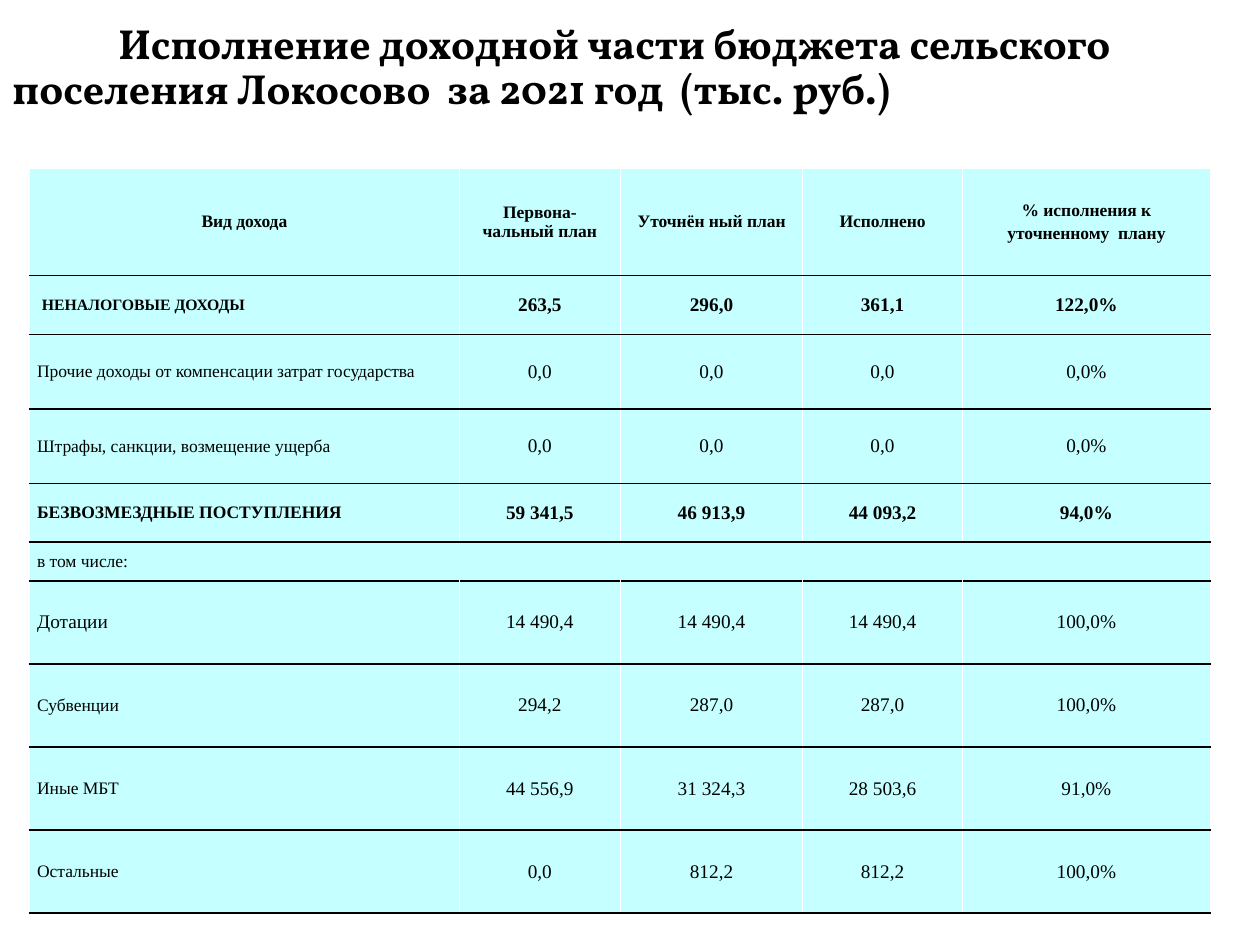
import pptx
import pptx.dml.color
import pptx.enum.text
import pptx.oxml
import pptx.oxml.ns
import pptx.util
from pptx.util import Pt

ALIGN = pptx.enum.text.PP_ALIGN
MIDDLE = pptx.enum.text.MSO_ANCHOR.MIDDLE
BLACK, WHITE, AQUA = "000000", "FFFFFF", "C5FFFF"
WIDE, TIGHT = (7.2, 3.6), (4.5, 0)


def color(value):
    return pptx.dml.color.RGBColor.from_string(value)


class SlideWriter:
    title_font = "Vollkorn"
    table_font = "Times New Roman"

    def __init__(self, page):
        self.page = page

    def span(self, para, text, font, size, bold):
        span = para.add_run()
        span.text = text
        span.font.name = font
        span.font.size = Pt(size)
        span.font.bold = bold
        span.font.color.rgb = color(BLACK)

    def title(self, text, left, top, width, height, indent):
        box = self.page.shapes.add_textbox(Pt(left), Pt(top), Pt(width), Pt(height))
        frame = box.text_frame
        frame.word_wrap = True
        frame.vertical_anchor = MIDDLE
        frame.margin_bottom = Pt(10.5)
        para = frame.paragraphs[0]
        para.line_spacing = 0.9
        para.alignment = ALIGN.LEFT
        properties = para._p.get_or_add_pPr()
        properties.set("marL", "0")
        properties.set("indent", str(Pt(indent)))
        self.span(para, text, self.title_font, 24, True)

    def table(self, left, top, widths, heights):
        frame = self.page.shapes.add_table(
            len(heights), len(widths), Pt(left), Pt(top), Pt(sum(widths)), Pt(sum(heights)))
        grid = frame.table
        grid.first_row = grid.horz_banding = False
        for column, width in zip(grid.columns, widths):
            column.width = Pt(width)
        for row, height in zip(grid.rows, heights):
            row.height = Pt(height)
        return grid

    def cell(self, cell, lines, size, bold, align, margins, before, top_color):
        cell.margin_left = cell.margin_right = Pt(margins[0])
        cell.margin_top = cell.margin_bottom = Pt(margins[1])
        cell.vertical_anchor = MIDDLE
        self.borders(cell, L=WHITE, R=WHITE, T=top_color, B=BLACK)
        cell.fill.solid()
        cell.fill.fore_color.rgb = color(AQUA)
        for number, line in enumerate(lines):
            frame = cell.text_frame
            para = frame.add_paragraph() if number else frame.paragraphs[0]
            para.alignment = align
            para.space_before = Pt(before)
            self.span(para, line, self.table_font, size, bold)

    def borders(self, cell, **sides):
        properties = cell._tc.get_or_add_tcPr()
        for side, value in sides.items():
            properties.append(pptx.oxml.parse_xml(
                f'<a:ln{side} {pptx.oxml.ns.nsdecls("a")} w="{Pt(1)}">'
                f'<a:solidFill><a:srgbClr val="{value}"/></a:solidFill></a:ln{side}>'))


HEADINGS = [["Вид дохода"], ["Первона-чальный план"], ["Уточнён ный план"],
            ["Исполнено"], ["% исполнения к", "уточненному  плану"]]

# Label, label size, bold, values
INCOME = [
    ("НЕНАЛОГОВЫЕ ДОХОДЫ", 9, True, ["263,5", "296,0", "361,1", "122,0%"]),
    ("Прочие доходы от компенсации затрат государства", 10, False,
     ["0,0", "0,0", "0,0", "0,0%"]),
    ("Штрафы, санкции, возмещение ущерба", 10, False, ["0,0", "0,0", "0,0", "0,0%"]),
    ("БЕЗВОЗМЕЗДНЫЕ ПОСТУПЛЕНИЯ", 10, True,
     ["59 341,5", "46 913,9", "44 093,2", "94,0%"]),
    ("в том числе:", 10, False, []),
    ("Дотации", 11, False, ["14 490,4", "14 490,4", "14 490,4", "100,0%"]),
    ("Субвенции", 10, False, ["294,2", "287,0", "287,0", "100,0%"]),
    ("Иные МБТ", 10, False, ["44 556,9", "31 324,3", "28 503,6", "91,0%"]),
    ("Остальные", 10, False, ["0,0", "812,2", "812,2", "100,0%"]),
]


def main():
    deck = pptx.Presentation()
    deck.slide_width, deck.slide_height = Pt(720), Pt(540)
    writer = SlideWriter(deck.slides.add_slide(deck.slide_layouts[6]))

    # Title with an indented first line
    writer.title("Исполнение доходной части бюджета сельского поселения Локосово"
                 "  за 2021 год  (тыс. руб.)", 0, 11.5, 702, 62, indent=60.5)

    # Income table
    widths = [245.75, 92, 104.25, 91.25, 141.75]
    heights = [61.5, 33.75, 42.5, 42.5, 33.5, 22.25] + [47.5] * 4
    grid = writer.table(16.75, 96, widths, heights)

    # Heading row
    for column, lines in enumerate(HEADINGS):
        writer.cell(grid.cell(0, column), lines, 10, True, ALIGN.CENTER, WIDE, 2, WHITE)

    # Income rows; a row without values spans the whole table
    for row, (label, size, bold, values) in enumerate(INCOME, start=1):
        margins, before = (WIDE, 2) if row == 1 else (TIGHT, 0)
        if not values:
            grid.cell(row, 0).merge(grid.cell(row, len(widths) - 1))
        writer.cell(grid.cell(row, 0), [label], size, bold, ALIGN.LEFT,
                    margins, before, BLACK)
        for column in range(1, len(widths)):
            writer.cell(grid.cell(row, column), values[column - 1:column], 11, bold,
                        ALIGN.CENTER, margins, before, BLACK)

    deck.save("out.pptx")


if __name__ == "__main__":
    main()
